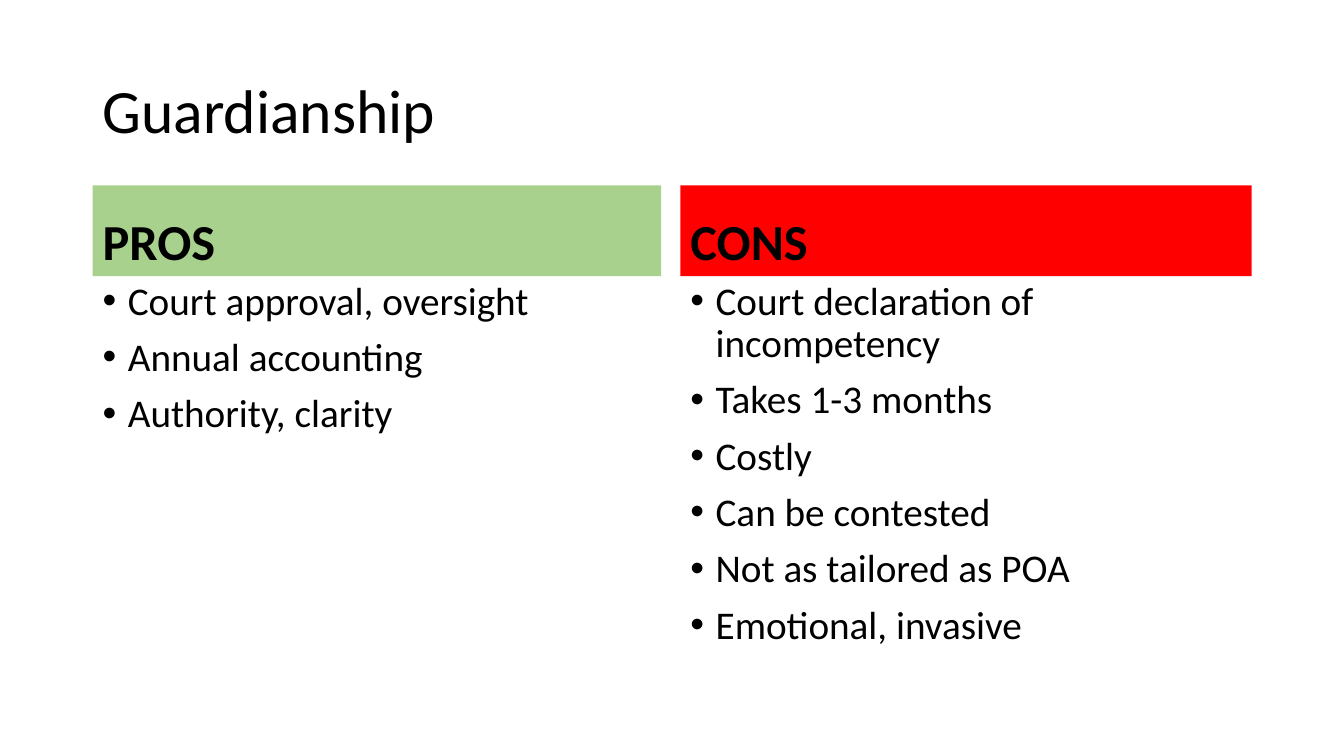
"""Build the Guardianship slide comparing pros and cons."""
from dataclasses import dataclass

from pptx import Presentation
from pptx.dml.color import RGBColor
from pptx.enum.text import MSO_ANCHOR, MSO_AUTO_SIZE, PP_ALIGN
from pptx.shapes.placeholder import SlidePlaceholder
from pptx.slide import Slide
from pptx.util import Pt

BLACK = RGBColor(0x00, 0x00, 0x00)
GREEN = RGBColor(0xA9, 0xD1, 0x8E)
RED = RGBColor(0xFF, 0x00, 0x00)

FONT = "Calibri"
COMPARISON_LAYOUT = 4
MARGIN_LEFT = 66.15
HEADING_TOP, HEADING_HEIGHT = 132.4, 64.9
POINTS_TOP, POINTS_HEIGHT = HEADING_TOP + HEADING_HEIGHT, 290.1
BULLET_INDENT = Pt(18)


@dataclass(frozen=True)
class Side:
    """One half of the comparison and its two placeholder indexes."""

    heading: str
    points: tuple[str, ...]
    color: RGBColor
    left: float
    width: float
    heading_idx: int
    points_idx: int


SIDES = (
    Side("PROS",
         ("Court approval, oversight", "Annual accounting", "Authority, clarity"),
         GREEN, MARGIN_LEFT, 406.1, 1, 2),
    Side("CONS",
         ("Court declaration of incompetency", "Takes 1-3 months", "Costly",
          "Can be contested", "Not as tailored as POA", "Emotional, invasive"),
         RED, 486, 408.1, 3, 4),
)


def place(holder: SlidePlaceholder, left: float, top: float, width: float, height: float) -> None:
    """Move and size a placeholder, in points."""
    holder.left, holder.top = Pt(left), Pt(top)
    holder.width, holder.height = Pt(width), Pt(height)


def write(holder: SlidePlaceholder, lines: tuple[str, ...], size: float, anchor: MSO_ANCHOR,
          space_before: float = 10, bold: bool = False, bulleted: bool = False) -> None:
    """Fill a placeholder with one formatted paragraph per line."""
    frame = holder.text_frame
    frame.text = "\n".join(lines)
    frame.auto_size = MSO_AUTO_SIZE.NONE
    frame.vertical_anchor = anchor
    for paragraph in frame.paragraphs:
        paragraph.alignment = PP_ALIGN.LEFT
        paragraph.line_spacing = 0.9
        paragraph.space_before = Pt(space_before)
        paragraph.font.name = FONT
        paragraph.font.size = Pt(size)
        paragraph.font.bold = bold
        paragraph.font.color.rgb = BLACK
        if bulleted:
            properties = paragraph._p.get_or_add_pPr()
            properties.set("marL", str(BULLET_INDENT))
            properties.set("indent", str(-BULLET_INDENT))


def add_side(slide: Slide, side: Side) -> None:
    """Fill the heading and the list of one side."""
    heading = slide.placeholders[side.heading_idx]
    place(heading, side.left, HEADING_TOP, side.width, HEADING_HEIGHT)
    heading.fill.solid()
    heading.fill.fore_color.rgb = side.color
    write(heading, (side.heading,), 36, MSO_ANCHOR.BOTTOM, bold=True)

    points = slide.placeholders[side.points_idx]
    place(points, side.left, POINTS_TOP, side.width, POINTS_HEIGHT)
    write(points, side.points, 28, MSO_ANCHOR.TOP, bulleted=True)


def main() -> None:
    """Build and save the slide."""
    presentation = Presentation()
    presentation.slide_width, presentation.slide_height = Pt(960), Pt(540)
    slide = presentation.slides.add_slide(presentation.slide_layouts[COMPARISON_LAYOUT])
    title = slide.shapes.title
    place(title, MARGIN_LEFT, 28.75, 828, 104.4)
    write(title, ("Guardianship",), 44, MSO_ANCHOR.MIDDLE, space_before=0)
    for side in SIDES:
        add_side(slide, side)
    presentation.save("out.pptx")


if __name__ == "__main__":
    main()
